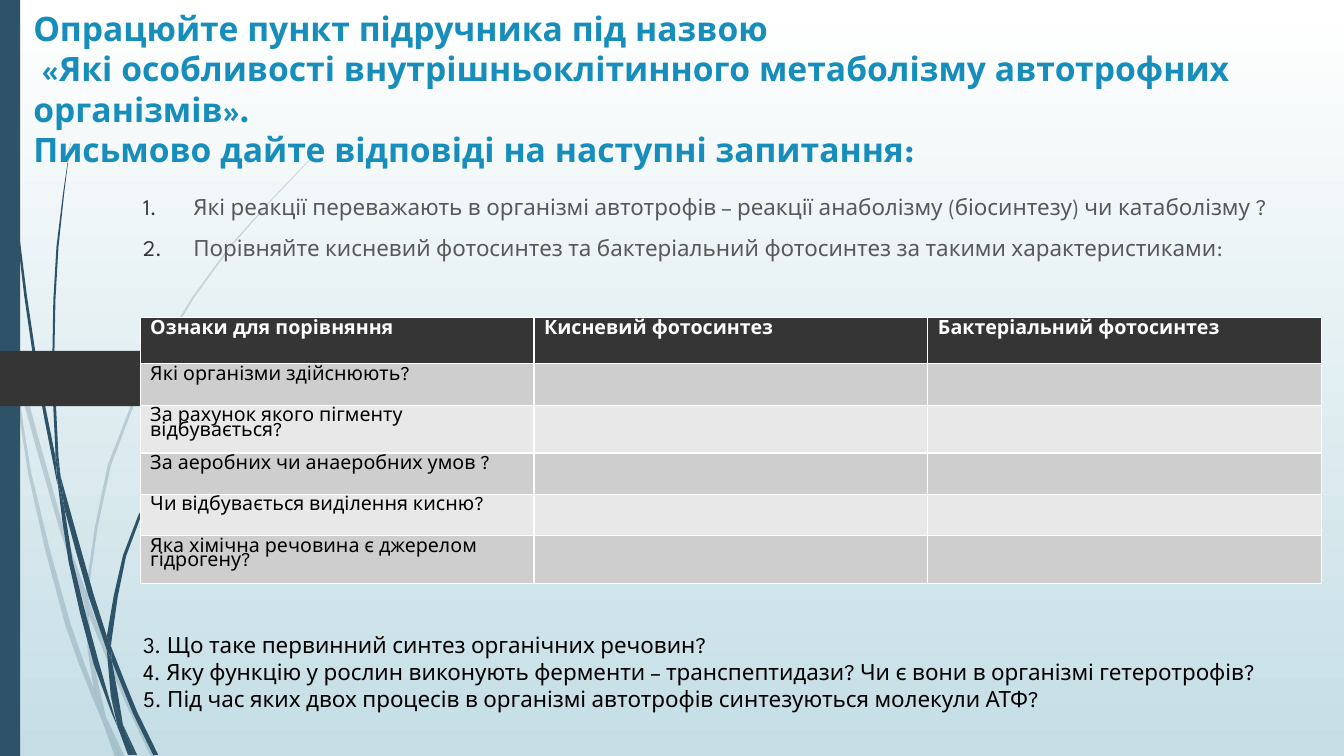
from copy import deepcopy
from math import hypot

from lxml.etree import SubElement
from pptx import Presentation
from pptx.dml.color import RGBColor
from pptx.enum.shapes import MSO_SHAPE as Preset
from pptx.enum.text import MSO_ANCHOR as Anchor, MSO_AUTO_SIZE as AutoSize, PP_ALIGN as Align
from pptx.oxml.ns import qn
from pptx.util import Emu, Pt

PX = 9144  # 100 px to the inch
FONT = "League Spartan"
NAVY = RGBColor(0x2E, 0x53, 0x69)
CHARCOAL = RGBColor(0x35, 0x35, 0x35)
BLUE = RGBColor(0x17, 0x8D, 0xBB)
GREY = RGBColor(0x59, 0x59, 0x59)
BLACK = RGBColor(0, 0, 0)
WHITE = RGBColor(0xFF, 0xFF, 0xFF)
PALE_BLUE = RGBColor(0xC5, 0xDE, 0xE5)
BANDS = RGBColor(0xCE, 0xCE, 0xCE), RGBColor(0xE8, 0xE8, 0xE8)

TITLE = ("Опрацюйте пункт підручника під назвою\v"
         " «Які особливості внутрішньоклітинного метаболізму автотрофних організмів». \v"
         "Письмово дайте відповіді на наступні запитання:")
NUMBERED_QUESTIONS = (
    "Які реакції переважають в організмі автотрофів – реакції анаболізму (біосинтезу) чи катаболізму ?",
    "Порівняйте кисневий фотосинтез та бактеріальний фотосинтез за такими характеристиками:",
)
HEADINGS = "Ознаки для порівняння", "Кисневий фотосинтез", "Бактеріальний фотосинтез"
FEATURES = (
    "Які організми здійснюють?",
    "За рахунок якого пігменту відбувається?",
    "За аеробних чи анаеробних умов ?",
    "Чи відбувається виділення кисню?",
    "Яка хімічна речовина є джерелом гідрогену?",
)
LAST_QUESTIONS = (
    "3. Що таке первинний синтез органічних речовин?",
    "4. Яку функцію у рослин виконують ферменти – транспептидази? Чи є вони в організмі гетеротрофів?",
    "5. Під час яких двох процесів в організмі автотрофів синтезуються молекули АТФ?",
)

# Each blade of grass is a pair of edges: one way out, the other way back.
FAINT_BLADES = (
    ([(0, 282), (9, 322), (11, 350)], [(10, 344), (0, 299)]),
    ([(14, 345), (62, 520), (85, 586)], [(84, 599), (58, 522), (17, 376)]),
    ([(88, 596), (92, 607), (127, 692), (155, 751)], [(150, 751), (123, 694), (88, 610)]),
    ([(105, 711), (124, 751)], [(119, 751), (105, 711)]),
    ([(11, 350), (17, 376), (31, 469), (70, 619), (93, 683), (101, 714)],
     [(92, 693), (65, 621), (28, 470), (11, 350)]),
    ([(84, 599), (88, 608), (91, 646), (105, 711)], [(93, 683), (87, 646), (84, 599)]),
    ([(85, 586), (107, 461), (158, 348), (228, 244), (312, 153)],
     [(312, 154), (229, 245), (160, 349), (110, 462), (88, 584), (88, 596)]),
    ([(101, 714), (119, 751)], [(114, 751), (101, 714)]),
    ([(85, 586), (88, 596), (88, 610)], [(88, 608), (84, 599)]),
    ([(93, 683), (105, 711), (119, 751)], [(101, 714), (93, 683)]),
)
DARK_BLADES = (
    ([(3, 0), (7, 110), (17, 233), (33, 355), (57, 481)],
     [(55, 453), (36, 355), (19, 232), (8, 109), (4, 0)]),
    ([(60, 472), (93, 590), (106, 631)], [(106, 645), (88, 592), (64, 505)]),
    ([(110, 641), (136, 706), (157, 749)], [(152, 749), (132, 708), (111, 656)]),
    ([(57, 477), (64, 505), (72, 556), (98, 657), (117, 722)],
     [(111, 708), (93, 659), (68, 557), (57, 477)]),
    ([(70, 141), (56, 245), (52, 349), (55, 449), (60, 472)],
     [(58, 453), (54, 349), (58, 245), (70, 141)]),
    ([(122, 719), (136, 749)], [(133, 749), (122, 719)]),
    ([(55, 449), (60, 472), (64, 505)], [(57, 477), (55, 453)]),
    ([(106, 631), (122, 551), (156, 474), (204, 405), (260, 344)],
     [(261, 344), (205, 406), (158, 476), (125, 552), (111, 633), (110, 641)]),
    ([(117, 722), (131, 749)], [(127, 749), (117, 722)]),
    ([(106, 645), (111, 656), (122, 719)], [(110, 691), (106, 645)]),
    ([(106, 631), (110, 641), (111, 656)], [(109, 651), (106, 645)]),
    ([(110, 691), (122, 719), (133, 749)], [(130, 749), (117, 722)]),
)


def emu(*lengths):
    return [Emu(round(length * PX)) for length in lengths]


def write(paragraph, text, size, color, bold=False, space_before=0, line_spacing=None):
    paragraph.text = text
    paragraph.space_before = Pt(space_before)
    paragraph.line_spacing = line_spacing
    for run in paragraph.runs:
        run.font.name, run.font.size, run.font.bold = FONT, Pt(size), bold
        run.font.color.rgb = color
    for line_break in paragraph._p.findall(qn("a:br")):
        line_break.append(deepcopy(paragraph.runs[0].font._element))


def paint(shape, color):
    shape.shadow.inherit = False
    shape.fill.solid()
    shape.fill.fore_color.rgb = color
    shape.line.fill.background()


def smooth_edge(anchors):
    """Return the anchors, with a point of a smooth curve amid each long gap."""
    last = len(anchors) - 1
    directions = []
    for i in range(last + 1):
        (x0, y0), (x1, y1) = anchors[max(i - 1, 0)], anchors[min(i + 1, last)]
        length = hypot(x1 - x0, y1 - y0)
        directions.append(((x1 - x0) / length, (y1 - y0) / length))
    points = [anchors[0]]
    for i in range(last):
        start, end = anchors[i], anchors[i + 1]
        gap = hypot(end[0] - start[0], end[1] - start[1])
        if gap > 60:
            points.append(tuple(
                (a + b) / 2 + gap / 8 * (out - into)
                for a, b, out, into in zip(start, end, directions[i], directions[i + 1])))
        points.append(end)
    return points


def add_grass(slide, blades, opacity=100):
    group = slide.shapes.add_group_shape()
    for edges in blades:
        outline = [emu(*point) for edge in edges for point in smooth_edge(edge)]
        builder = group.shapes.build_freeform(*outline[0])
        builder.add_line_segments(outline[1:], close=True)
        blade = builder.convert_to_shape()
        paint(blade, NAVY)
        if opacity < 100:
            color = blade._element.spPr.find(qn("a:solidFill"))[0]
            SubElement(color, qn("a:alpha"), val=str(opacity * 1000))


def add_backdrop(slide):
    fill = slide.background.fill
    fill.gradient()
    fill.gradient_angle = 270
    for stop, color, position in zip(fill.gradient_stops, (WHITE, PALE_BLUE), (0, 1)):
        stop.color.rgb, stop.position = color, position
    add_grass(slide, FAINT_BLADES, opacity=20)
    add_grass(slide, DARK_BLADES)
    paint(slide.shapes.add_shape(Preset.RECTANGLE, *emu(0, 0, 20, 750)), NAVY)
    page_tab = slide.shapes.add_shape(Preset.PENTAGON, *emu(0, 348, 174, 55))
    paint(page_tab, CHARCOAL)


def add_title(slide, box):
    title = slide.shapes.title
    title.left, title.top, title.width, title.height = emu(*box)
    frame = title.text_frame
    frame.word_wrap, frame.auto_size = True, AutoSize.NONE
    frame.vertical_anchor = Anchor.BOTTOM
    write(frame.paragraphs[0], TITLE, 24, BLUE, bold=True)
    frame.paragraphs[0].alignment = Align.LEFT
    title._element.getparent().append(title._element)


def add_questions(slide, box, questions, color, numbered=False):
    frame = slide.shapes.add_textbox(*emu(*box)).text_frame
    frame.word_wrap = True
    for i, question in enumerate(questions):
        paragraph = frame.add_paragraph() if i else frame.paragraphs[0]
        if numbered:
            properties = paragraph._p.get_or_add_pPr()
            properties.set("marL", str(50 * PX))
            properties.set("indent", str(-50 * PX))
            bullet_color = SubElement(properties, qn("a:buClr"))
            SubElement(bullet_color, qn("a:srgbClr"), val=str(CHARCOAL))
            SubElement(properties, qn("a:buAutoNum"), type="arabicPeriod")
        write(paragraph, question, 16, color, space_before=10 if numbered and i else 0)


def add_comparison(slide, box, header_height=46):
    rows = [HEADINGS] + [(feature, "", "") for feature in FEATURES]
    table = slide.shapes.add_table(len(rows), len(HEADINGS), *emu(*box)).table
    table.rows[0].height, = emu(header_height)
    for r, texts in enumerate(rows):
        for c, text in enumerate(texts):
            cell = table.cell(r, c)
            cell.fill.solid()
            cell.fill.fore_color.rgb = BANDS[(r - 1) % 2] if r else CHARCOAL
            write(cell.text_frame.paragraphs[0], text, 14, BLACK if r else WHITE,
                  bold=r == 0, line_spacing=0.8)


def main():
    presentation = Presentation()
    presentation.slide_width, presentation.slide_height = emu(1333, 750)
    slide = presentation.slides.add_slide(presentation.slide_layouts[5])
    add_backdrop(slide)
    add_title(slide, (23, 12, 1287, 161))
    add_questions(slide, (132, 187, 1178, 94), NUMBERED_QUESTIONS, GREY, numbered=True)
    add_comparison(slide, (139, 315, 1172, 246))
    add_questions(slide, (132, 621, 1178, 91), LAST_QUESTIONS, BLACK)
    presentation.save("out.pptx")


if __name__ == "__main__":
    main()
